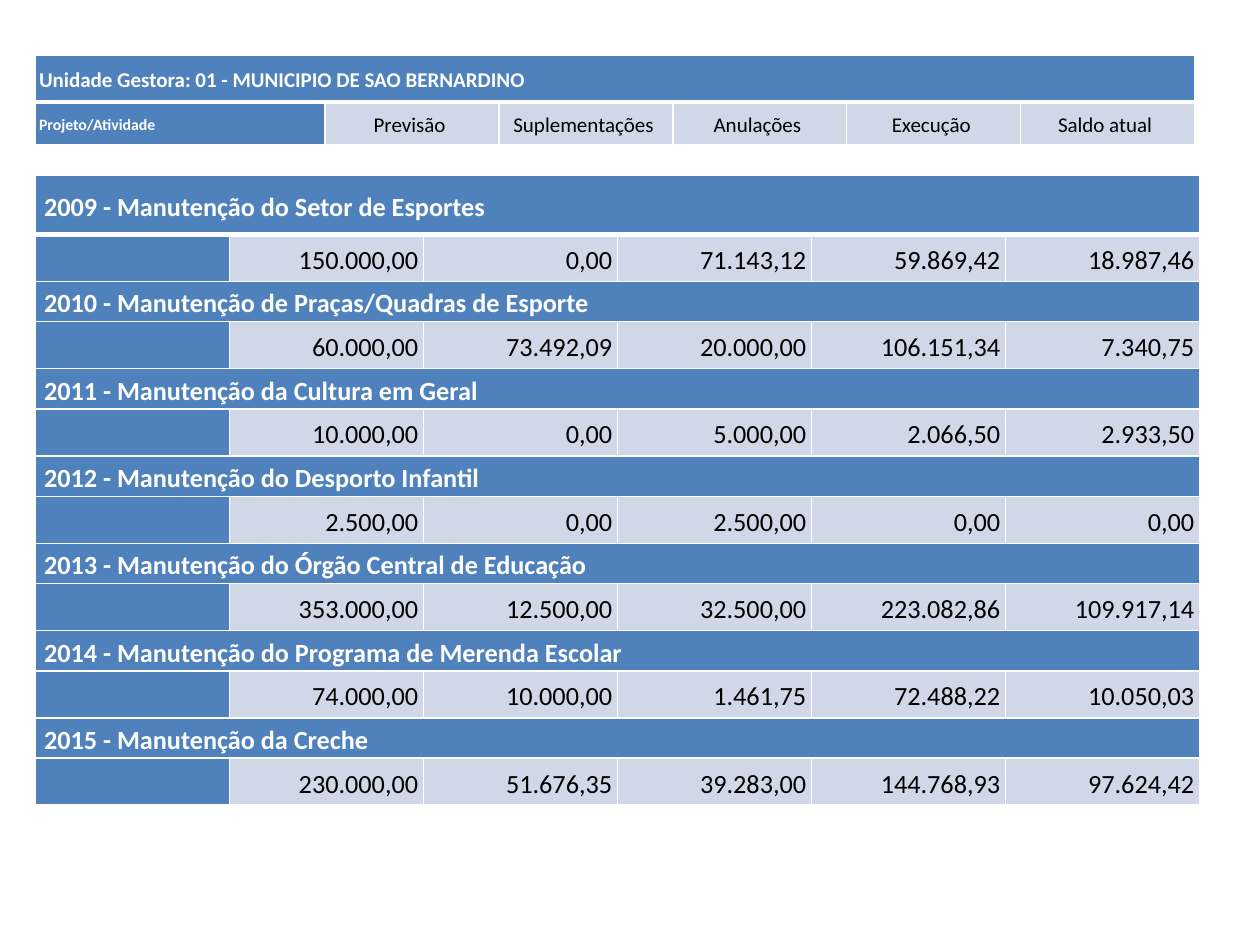
from lxml.etree import SubElement
from pptx import Presentation
from pptx.dml.color import RGBColor as RGB
from pptx.enum.text import MSO_ANCHOR as Anchor, PP_ALIGN as Align
from pptx.oxml.ns import qn
from pptx.util import Inches, Pt

COLORS = {"band": "4F81BD", "value": "D0D8E8", "rule": "FFFFFF",
          "light": "FFFFFF", "dark": "000000"}
LEFT = 0.28
COLUMNS = 6

HEADING = "Unidade Gestora: 01 - MUNICIPIO DE SAO BERNARDINO"
LABELS = ["Projeto/Atividade", "Previsão ", "Suplementações ",
          "Anulações ", "Execução ", "Saldo atual "]
PROJECTS = {
    "2009 - Manutenção do Setor de Esportes":
        ["150.000,00", "0,00", "71.143,12", "59.869,42", "18.987,46"],
    "2010 - Manutenção de Praças/Quadras de Esporte":
        ["60.000,00", "73.492,09", "20.000,00", "106.151,34", "7.340,75"],
    "2011 - Manutenção da Cultura em Geral":
        ["10.000,00", "0,00", "5.000,00", "2.066,50", "2.933,50"],
    "2012 - Manutenção do Desporto Infantil":
        ["2.500,00", "0,00", "2.500,00", "0,00", "0,00"],
    "2013 - Manutenção do Órgão Central de Educação":
        ["353.000,00", "12.500,00", "32.500,00", "223.082,86", "109.917,14"],
    "2014 - Manutenção do Programa de Merenda Escolar":
        ["74.000,00", "10.000,00", "1.461,75", "72.488,22", "10.050,03"],
    "2015 - Manutenção da Creche":
        ["230.000,00", "51.676,35", "39.283,00", "144.768,93", "97.624,42"],
}


def fill_cell(cell, text, look, rules):
    """Write one cell; rules gives the width in points of each border."""
    across, down = look["inset"]
    margins = {"margin_left": across, "margin_right": across,
               "margin_top": down, "margin_bottom": down}
    for side, inset in margins.items():
        setattr(cell, side, Inches(inset))
    cell.vertical_anchor = Anchor.MIDDLE

    properties = cell._tc.get_or_add_tcPr()
    for side, width in rules.items():
        line = SubElement(properties, qn(f"a:ln{side}"), w=str(Pt(width)))
        paint = SubElement(line, qn("a:solidFill"))
        SubElement(paint, qn("a:srgbClr"), val=COLORS["rule"])
    cell.fill.solid()
    cell.fill.fore_color.rgb = RGB.from_string(COLORS[look["fill"]])

    paragraph = cell.text_frame.paragraphs[0]
    paragraph.alignment = look["align"]
    paragraph.line_spacing = 1.15
    if not text:
        SubElement(paragraph._p, qn("a:endParaRPr"), sz=str(look["size"] * 100))
        return
    run = paragraph.add_run()
    run.text = text
    font_format = {"name": "Calibri", "size": Pt(look["size"]),
                   "bold": look["fill"] == "band"}
    for name, value in font_format.items():
        setattr(run.font, name, value)
    run.font.color.rgb = RGB.from_string(COLORS[look["ink"]])


def add_grid(top, widths, heights, rows, band, value):
    """Add a table in which a row holding a single text spans all columns."""
    table = slide.shapes.add_table(
        len(rows), COLUMNS, Inches(LEFT), Inches(top),
        Inches(sum(widths)), Inches(sum(heights))).table
    table.first_row = table.horz_banding = False
    for column, width in zip(table.columns, widths):
        column.width = Inches(width)
    for r, (texts, height) in enumerate(zip(rows, heights)):
        table.rows[r].height = Inches(height)
        rules = {"L": 1, "R": 1, "T": 3 if r == 1 else 1, "B": 3 if r == 0 else 1}
        spans = len(texts) == 1
        if spans:
            table.cell(r, 0).merge(table.cell(r, COLUMNS - 1))
        for c in range(COLUMNS):
            look = band if spans else value if c else {**band, **value, **side_label}
            fill_cell(table.cell(r, c), texts[c] if c < len(texts) else "", look, rules)


presentation = Presentation()
presentation.slide_width, presentation.slide_height = Inches(10), Inches(7.5)
slide = presentation.slides.add_slide(presentation.slide_layouts[6])

# Project balances: a name band above a row of amounts
band = {"fill": "band", "ink": "light", "align": Align.LEFT, "size": 15, "inset": (0.07, 0.01)}
amount = {"fill": "value", "ink": "dark", "align": Align.RIGHT, "size": 15, "inset": (0.04, 0.04)}
side_label = {"fill": "band", "ink": "light", "align": Align.LEFT, "size": 9}
balances = [row for name, amounts in PROJECTS.items() for row in ([name], ["", *amounts])]
add_grid(1.39, [1.54] * COLUMNS, [0.47, 0.37] + [0.32, 0.37] * (len(PROJECTS) - 1),
         balances, band, amount)

# Heading and column labels
narrow = {"size": 12, "inset": (0.03, 0.01)}
add_grid(0.44, [2.3] + [1.38] * (COLUMNS - 1), [0.37, 0.34], [[HEADING], LABELS],
         {**band, **narrow}, {**amount, **narrow, "align": Align.CENTER})

presentation.save("out.pptx")
